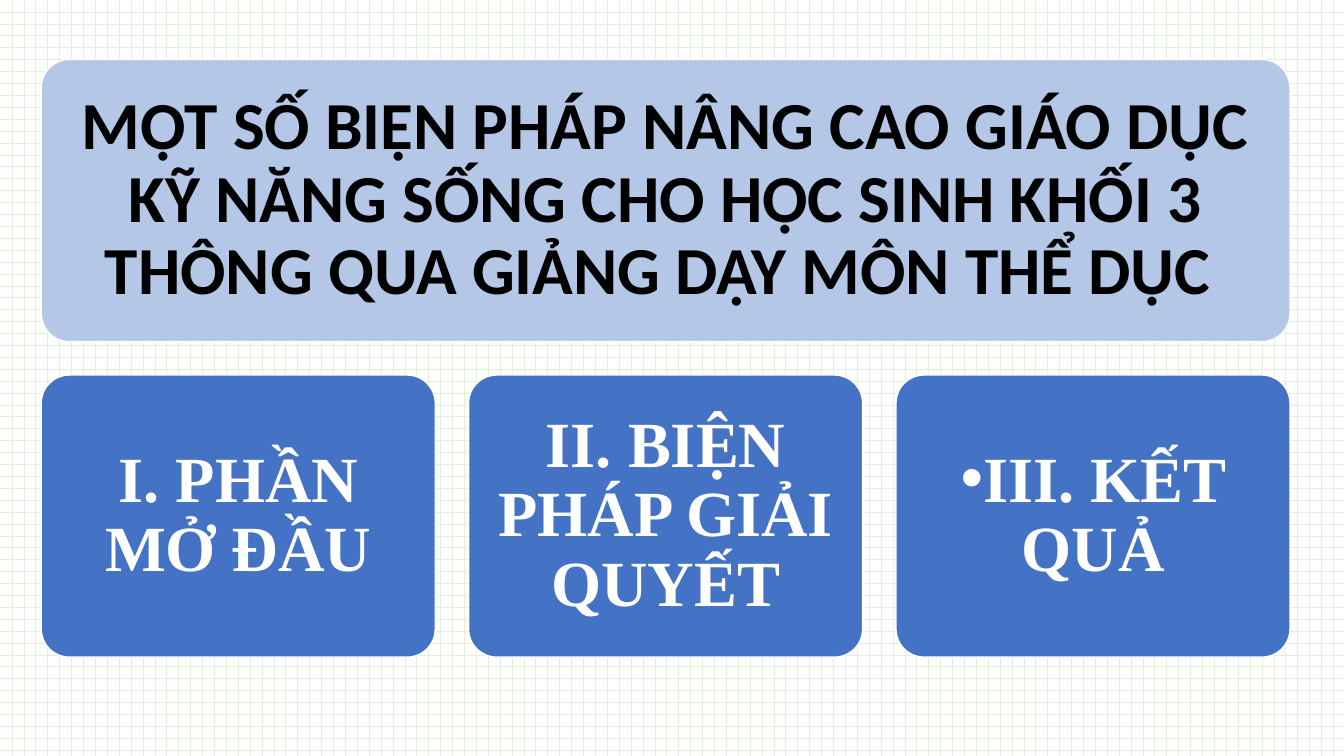
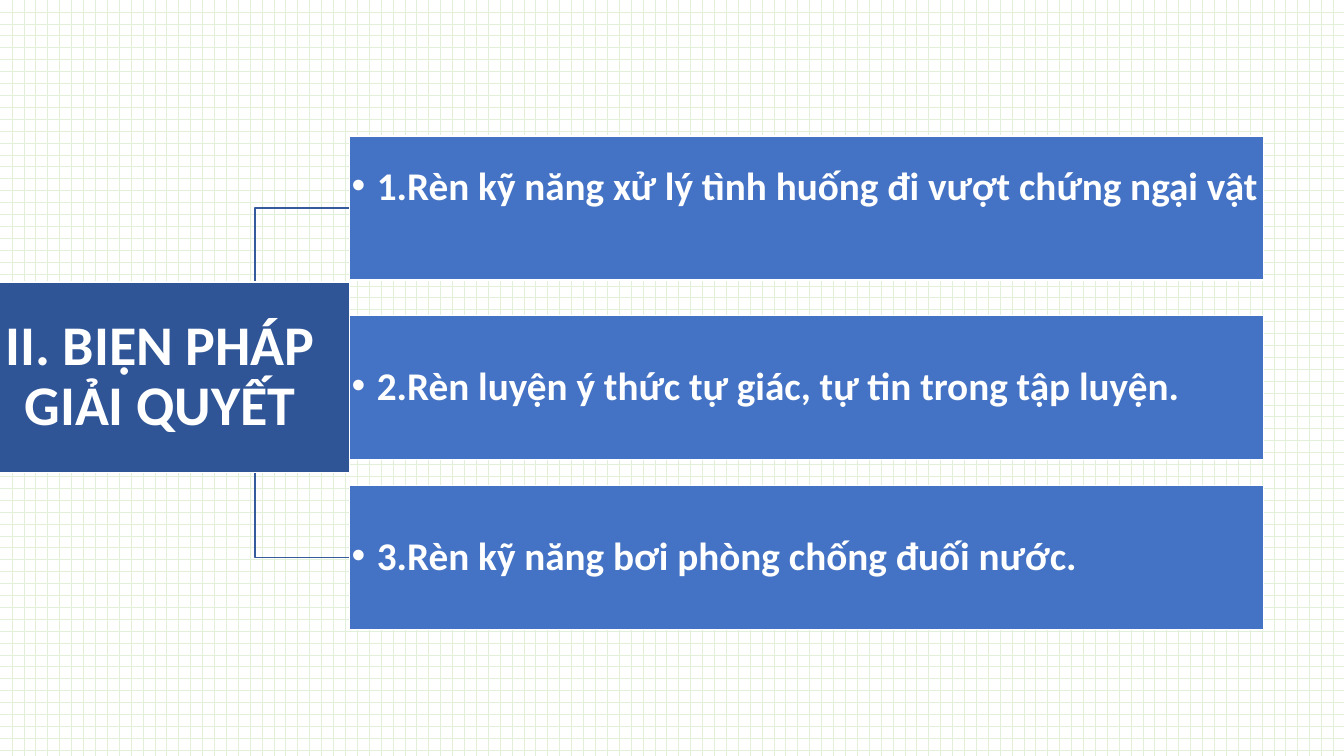
from lxml import etree
from pptx import Presentation
from pptx import util as u
from pptx.dml.color import RGBColor
from pptx.enum import dml, shapes, text
from pptx.oxml import ns

COLORS = {
    "grid": "E2F0D9",
    "white": "FFFFFF",
    "black": "000000",
    "banner": "B4C7E7",
    "card": "4472C4",
    "hub": "2F5597",
    "branch": "365B9D",
}
SANS, SERIF = "Calibri", "Times New Roman"


def rgb(name):
    return RGBColor.from_string(COLORS[name])


def new_slide(prs):
    slide = prs.slides.add_slide(prs.slide_layouts[6])
    fill = slide.background.fill
    fill.patterned()
    fill.pattern = dml.MSO_PATTERN.HORIZONTAL_BRICK
    fill.fore_color.rgb = rgb("grid")
    fill.back_color.rgb = rgb("white")
    return slide


def add_bullet(paragraph, color, hanging):
    props = paragraph._p.get_or_add_pPr()
    props.set("marL", str(u.Cm(hanging)))
    props.set("indent", str(-u.Cm(hanging)))
    bullet_color = etree.SubElement(props, ns.qn("a:buClr"))
    etree.SubElement(bullet_color, ns.qn("a:srgbClr"), val=COLORS[color])
    etree.SubElement(props, ns.qn("a:buFont"), typeface="Arial")
    etree.SubElement(props, ns.qn("a:buChar"), char="•")


def add_box(slide, wording, left, top, width, height, fill, size, font=SANS,
            color="white", inset=0.05, rounded=False, centered=True, hanging=None):
    kind = shapes.MSO_SHAPE.ROUNDED_RECTANGLE if rounded else shapes.MSO_SHAPE.RECTANGLE
    box = slide.shapes.add_shape(kind, u.Cm(left), u.Cm(top), u.Cm(width), u.Cm(height))
    if rounded:
        box.adjustments[0] = 0.1
    box.shadow.inherit = False
    box.fill.solid()
    box.fill.fore_color.rgb = rgb(fill)
    box.line.color.rgb = rgb("white")
    box.line.width = u.Pt(1)

    frame = box.text_frame
    frame.word_wrap = True
    frame.vertical_anchor = text.MSO_ANCHOR.MIDDLE
    frame.margin_left = frame.margin_right = u.Cm(inset)
    frame.margin_top = frame.margin_bottom = u.Cm(inset)
    paragraph = frame.paragraphs[0]
    paragraph.text = wording
    paragraph.alignment = text.PP_ALIGN.CENTER if centered else text.PP_ALIGN.LEFT
    paragraph.line_spacing = 0.9
    if hanging is not None:
        add_bullet(paragraph, color, hanging)
    paragraph.font.name = font
    paragraph.font.size = u.Pt(size)
    paragraph.font.bold = True
    paragraph.font.color.rgb = rgb(color)
    return box


def add_branch(slide, start_x, start_y, end_x, end_y):
    branch = slide.shapes.add_connector(
        shapes.MSO_CONNECTOR.ELBOW,
        u.Cm(start_x), u.Cm(start_y), u.Cm(end_x), u.Cm(end_y))
    branch.line.color.rgb = rgb("branch")
    branch.line.width = u.Pt(1)
    etree.SubElement(branch._element.spPr, ns.qn("a:effectLst"))


def build_outline(prs):
    slide = new_slide(prs)
    left, width, height, gap = 1.04, 31.47, 7.11, 0.84
    banner_top = 1.5
    add_box(slide, "MỘT SỐ BIỆN PHÁP NÂNG CAO GIÁO DỤC KỸ NĂNG SỐNG CHO HỌC SINH "
            "KHỐI 3 THÔNG QUA GIẢNG DẠY MÔN THỂ DỤC ",
            left, banner_top, width, height, "banner", 48,
            color="black", inset=0.5, rounded=True)

    parts = [("I. PHẦN MỞ ĐẦU", None),
             ("II. BIỆN PHÁP GIẢI QUYẾT", None),
             ("III. KẾT QUẢ", 0)]
    part_width = (width - gap * (len(parts) - 1)) / len(parts)
    for index, (part, hanging) in enumerate(parts):
        add_box(slide, part, left + index * (part_width + gap),
                banner_top + height + gap, part_width, height, "card", 46,
                font=SERIF, inset=0.48, rounded=True, hanging=hanging)


def build_measures(prs):
    slide = new_slide(prs)
    hub_left, hub_top, hub_width, hub_height = -0.74, 7.11, 9.55, 4.8
    measure_left, measure_width, measure_height = 8.81, 23.04, 3.63
    measures = [
        (3.43, "1.Rèn kỹ năng xử lý tình huống đi vượt chứng ngại vật"),
        (7.95, "2.Rèn luyện ý thức tự giác, tự tin trong tập luyện."),
        (12.24, "3.Rèn kỹ năng bơi phòng chống đuối nước."),
    ]
    for top, _ in measures:
        add_branch(slide, hub_left + hub_width / 2, hub_top + hub_height / 2,
                   measure_left, top + measure_height / 2)
    add_box(slide, "II. BIỆN PHÁP GIẢI QUYẾT", hub_left, hub_top,
            hub_width, hub_height, "hub", 40, inset=0.08)
    bars = [add_box(slide, measure, measure_left, top, measure_width, measure_height,
                    "card", 28, centered=False, hanging=0.64)
            for top, measure in measures]
    bars[0].text_frame.margin_bottom = u.Cm(1.1)


def main():
    prs = Presentation()
    prs.slide_width, prs.slide_height = u.Cm(33.87), u.Cm(19.05)
    build_outline(prs)
    build_measures(prs)
    prs.save("out.pptx")


if __name__ == "__main__":
    main()
